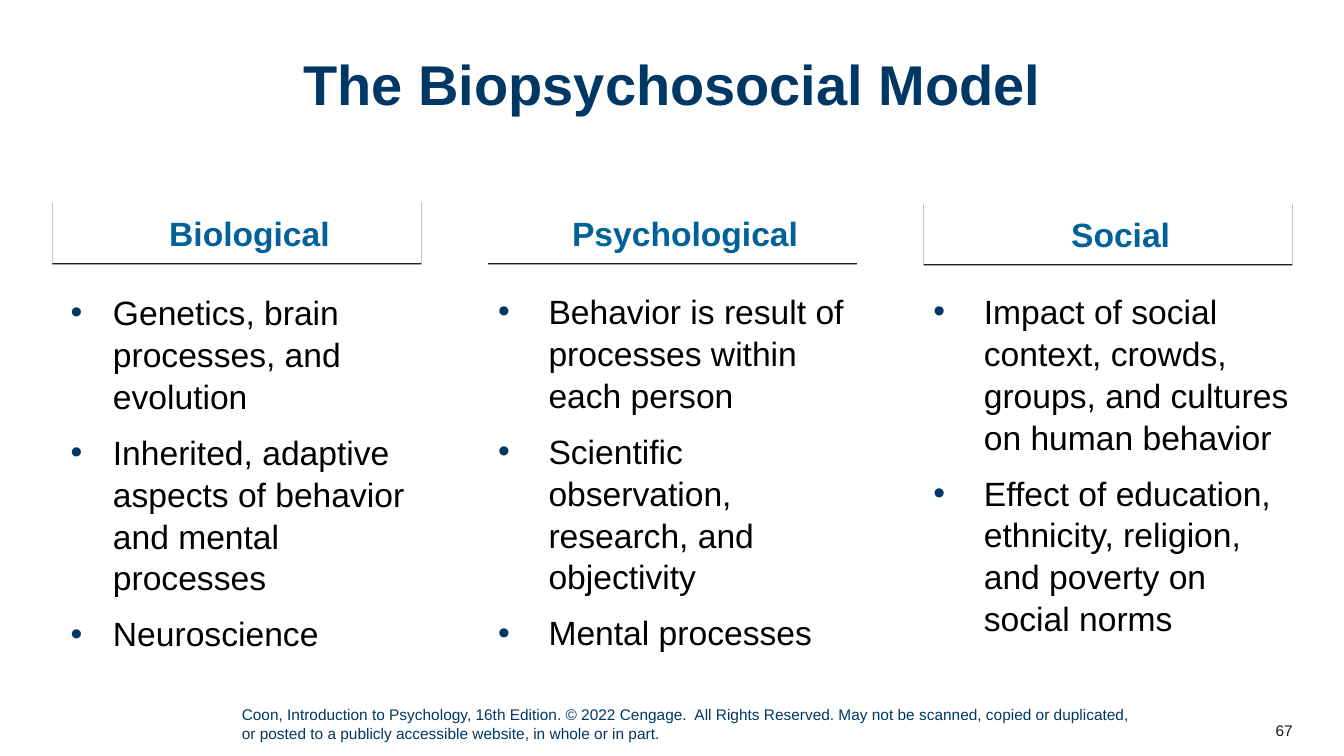
from dataclasses import dataclass

from lxml import etree
from pptx import Presentation
from pptx.dml.color import RGBColor
from pptx.enum.text import MSO_ANCHOR, MSO_AUTO_SIZE, PP_ALIGN
from pptx.oxml.ns import qn
from pptx.util import Inches, Pt

LEFT, CENTER, RIGHT = PP_ALIGN.LEFT, PP_ALIGN.CENTER, PP_ALIGN.RIGHT
TOP, MIDDLE, BOTTOM = MSO_ANCHOR.TOP, MSO_ANCHOR.MIDDLE, MSO_ANCHOR.BOTTOM
NO_AUTOFIT = MSO_AUTO_SIZE.NONE
COMPARISON_LAYOUT = 4


@dataclass(frozen=True)
class Theme:
    font: str = "Arial"
    navy: str = "003865"
    blue: str = "006298"
    black: str = "000000"
    charcoal: str = "181717"
    white: str = "FFFFFF"
    title_size: int = 40
    body_size: int = 24
    footer_size: int = 11


class SlideBuilder:
    def __init__(self, slide, theme):
        self.slide = slide
        self.theme = theme

    def frame(self, box, placeholder=None, anchor=TOP, vertical_inset=0.05):
        """Place a placeholder, or a new text box, and set up its text frame."""
        position = [Inches(length) for length in box]
        if placeholder is None:
            shape = self.slide.shapes.add_textbox(*position)
        else:
            shape = self.slide.placeholders[placeholder]
            shape.left, shape.top, shape.width, shape.height = position
        text_frame = shape.text_frame
        text_frame.word_wrap = True
        text_frame.auto_size = NO_AUTOFIT
        text_frame.vertical_anchor = anchor
        text_frame.margin_left = text_frame.margin_right = Inches(0.1)
        text_frame.margin_top = text_frame.margin_bottom = Inches(vertical_inset)
        return shape

    def style(self, paragraph, size, color, bold=False, alignment=LEFT, line_spacing=1.0):
        paragraph.alignment = alignment
        paragraph.line_spacing = line_spacing
        paragraph.space_before = Pt(0)
        font = paragraph.font
        font.name, font.size, font.bold = self.theme.font, Pt(size), bold
        font.color.rgb = RGBColor.from_string(color)

    def indent(self, paragraph, hanging, bullet=None):
        properties = paragraph._p.get_or_add_pPr()
        properties.set("marL", str(Inches(0.5)))
        properties.set("indent", str(-Inches(hanging)))
        if bullet:
            color = etree.SubElement(properties, qn("a:buClr"))
            etree.SubElement(color, qn("a:srgbClr"), val=self.theme.navy)
            etree.SubElement(properties, qn("a:buFont"), typeface=self.theme.font)
            etree.SubElement(properties, qn("a:buChar"), char=bullet)
        else:
            etree.SubElement(properties, qn("a:buNone"))

    def underline_shadow(self, shape):
        """Add a sharp shadow one point below the shape."""
        effects = etree.SubElement(shape._element.spPr, qn("a:effectLst"))
        shadow = etree.SubElement(effects, qn("a:outerShdw"), blurRad="0",
                                  dist=str(Pt(1)), dir="5400000", algn="t", rotWithShape="0")
        etree.SubElement(shadow, qn("a:srgbClr"), val=self.theme.black)

    def title(self, text, box):
        paragraph = self.frame(box, 0).text_frame.paragraphs[0]
        paragraph.text = text
        self.style(paragraph, self.theme.title_size, self.theme.navy, True, CENTER, 0.9)

    def heading(self, text, box, placeholder):
        shape = self.frame(box, placeholder, BOTTOM, 0.1)
        shape.fill.solid()
        shape.fill.fore_color.rgb = RGBColor.from_string(self.theme.white)
        self.underline_shadow(shape)
        paragraph = shape.text_frame.paragraphs[0]
        paragraph.text = text
        self.indent(paragraph, 0.25)
        self.style(paragraph, self.theme.body_size, self.theme.blue, True, CENTER)

    def bullets(self, items, box, placeholder, hanging):
        text_frame = self.frame(box, placeholder).text_frame
        for number, item in enumerate(items):
            paragraph = text_frame.add_paragraph() if number else text_frame.paragraphs[0]
            paragraph.text = item
            self.indent(paragraph, hanging, "•")
            self.style(paragraph, self.theme.body_size, self.theme.black, line_spacing=1.04)
            if number:
                paragraph.space_before = Pt(10)

    def footer(self, text, box, color, alignment=LEFT, anchor=TOP):
        paragraph = self.frame(box, anchor=anchor).text_frame.paragraphs[0]
        paragraph.text = text
        self.style(paragraph, self.theme.footer_size, color, alignment=alignment)


# heading, heading top, list top, list width, hanging indent, items
COLUMNS = [
    ("Biological", 2, 2.83, 3.66, 0.42, [
        "Genetics, brain processes, and evolution",
        "Inherited, adaptive aspects of behavior and mental processes",
        "Neuroscience"]),
    ("Psychological", 2, 2.82, 3.66, 0.5, [
        "Behavior is result of processes within each person",
        "Scientific observation, research, and objectivity",
        "Mental processes"]),
    ("Social", 2.01, 2.82, 3.78, 0.5, [
        "Impact of social context, crowds, groups, and cultures on human behavior",
        "Effect of education, ethnicity, religion, and poverty on social norms"]),
]
COLUMN_LEFT, COLUMN_STEP = 0.52, 4.32
PLACEHOLDER_PAIRS = [(1, 2), (3, 4), (None, None)]
COPYRIGHT = ("Coon, Introduction to Psychology, 16th Edition. © 2022 Cengage.  All Rights "
             "Reserved. May not be scanned, copied or duplicated, or posted to a publicly "
             "accessible website, in whole or in part.")


def main():
    presentation = Presentation()
    presentation.slide_width, presentation.slide_height = Inches(13.33), Inches(7.5)
    layout = presentation.slide_layouts[COMPARISON_LAYOUT]
    theme = Theme()
    builder = SlideBuilder(presentation.slides.add_slide(layout), theme)
    builder.footer("67", (12.12, 7.05, 0.8, 0.4), theme.charcoal, RIGHT, MIDDLE)
    builder.footer(COPYRIGHT, (2.3, 6.95, 9.06, 0.66), theme.navy)
    builder.title("The Biopsychosocial Model", (0.52, 0.52, 12.29, 0.99))
    for number, (column, placeholders) in enumerate(zip(COLUMNS, PLACEHOLDER_PAIRS)):
        heading, heading_top, list_top, list_width, hanging, items = column
        left = COLUMN_LEFT + number * COLUMN_STEP
        builder.heading(heading, (left, heading_top, 3.66, 0.61), placeholders[0])
        builder.bullets(items, (left, list_top, list_width, 3.93), placeholders[1], hanging)
    presentation.save("out.pptx")


if __name__ == "__main__":
    main()
